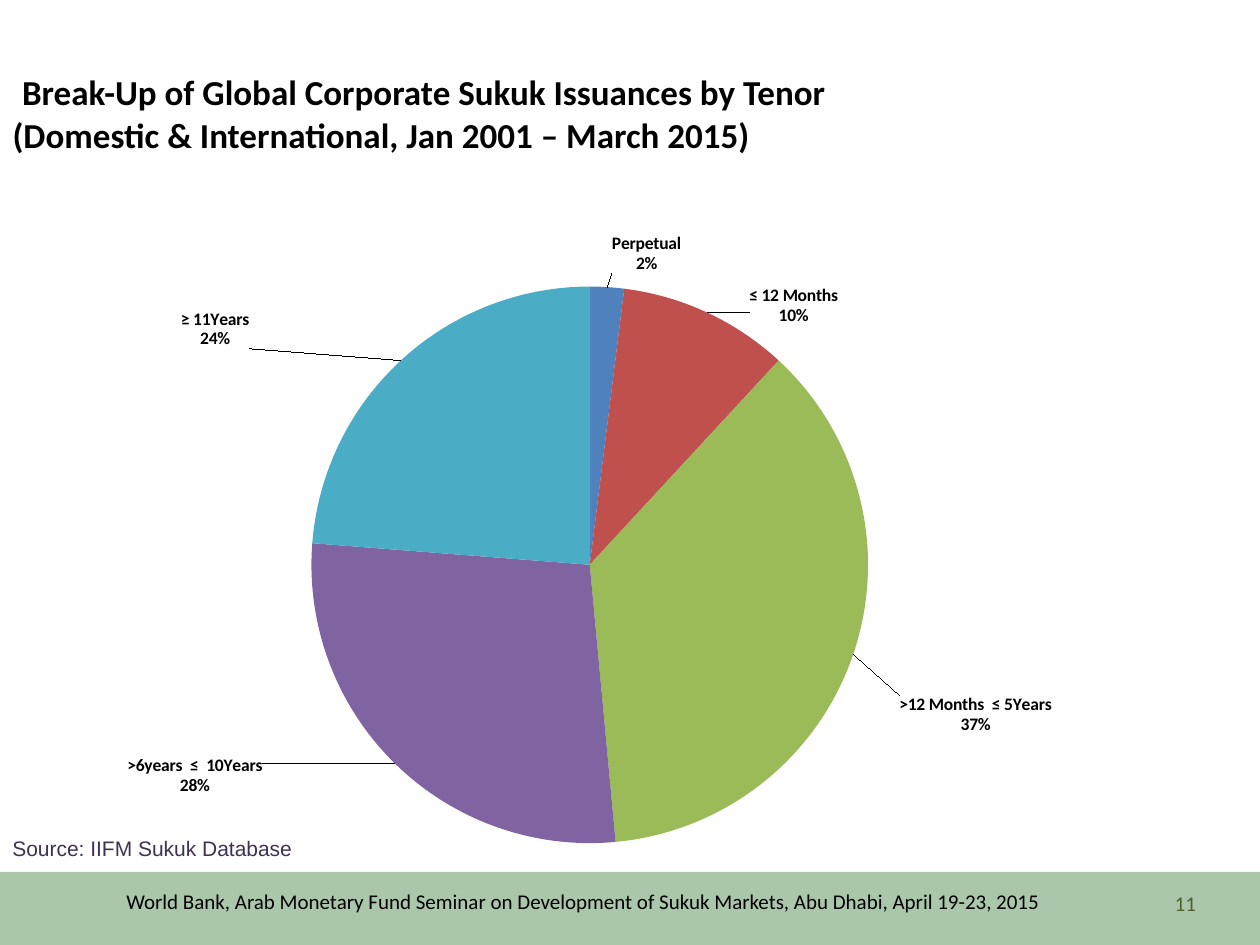
import lxml.etree
import pptx
import pptx.chart.data
import pptx.dml.color
import pptx.enum.chart
import pptx.enum.shapes
import pptx.enum.text
import pptx.oxml
import pptx.oxml.ns
import pptx.util

Inches = pptx.util.Inches
ALIGN = pptx.enum.text.PP_ALIGN
ANCHOR = pptx.enum.text.MSO_ANCHOR

# Category, percentage, slice colour, label shift as a share of the chart size
TENORS = [
    ("Perpetual", 2, "4F81BD", (0.04, -0.01)),
    ("≤ 12 Months", 10, "C0504D", (0.04, 0.03)),
    (">12 Months  ≤ 5Years", 37, "9BBB59", (0.04, 0.06)),
    (">6years  ≤  10Years", 28, "8064A2", (-0.13, -0.02)),
    ("≥ 11Years", 24, "4BACC6", (-0.15, -0.01)),
]


def color(value):
    return pptx.dml.color.RGBColor.from_string(value)


def place(shape, left, top, width, height):
    shape.left, shape.top = Inches(left), Inches(top)
    shape.width, shape.height = Inches(width), Inches(height)


def set_font(font, size, name, hex_color, bold=False):
    font.size = pptx.util.Pt(size)
    font.name = name
    font.bold = bold
    font.color.rgb = color(hex_color)


def add_band(slide):
    band = slide.shapes.add_shape(
        pptx.enum.shapes.MSO_SHAPE.RECTANGLE,
        Inches(0), Inches(6.92), Inches(10), Inches(0.58))
    band.shadow.inherit = False
    band.line.fill.background()
    band.fill.solid()
    band.fill.fore_color.rgb = color("72A376")
    # 60 % opacity
    fill_color = band.fill._xPr.find(".//" + pptx.oxml.ns.qn("a:srgbClr"))
    lxml.etree.SubElement(fill_color, pptx.oxml.ns.qn("a:alpha"), val="60000")


def add_title(slide, text):
    title = slide.shapes.title
    place(title, 0, 0.33, 7.17, 1.08)
    frame = title.text_frame
    frame.word_wrap = True
    frame.auto_size = pptx.enum.text.MSO_AUTO_SIZE.NONE
    frame.vertical_anchor = ANCHOR.MIDDLE
    frame.margin_right = Inches(0.05)
    paragraph = frame.paragraphs[0]
    paragraph.alignment = ALIGN.LEFT
    for content, size in ((" ", 24), (text, 20)):
        run = paragraph.add_run()
        run.text = content
        set_font(run.font, size, "Calibri", "000000", bold=True)


def add_text(slide, text, box, font_name, hex_color,
             alignment=ALIGN.LEFT, anchor=ANCHOR.TOP):
    shape = slide.shapes.add_textbox(*map(Inches, box))
    frame = shape.text_frame
    frame.word_wrap = True
    frame.vertical_anchor = anchor
    paragraph = frame.paragraphs[0]
    paragraph.text = text
    paragraph.alignment = alignment
    set_font(paragraph.font, 12, font_name, hex_color)


def manual_layout(x, y, extra=""):
    return (f'<c:layout {pptx.oxml.ns.nsdecls("c")}><c:manualLayout>{extra}'
            f'<c:x val="{x}"/><c:y val="{y}"/>')


def add_label_shift(labels_element, index, shift):
    """Move one label away from its slice, so that a leader line shows."""
    label = pptx.oxml.parse_xml(
        f'<c:dLbl {pptx.oxml.ns.nsdecls("c")}><c:idx val="{index}"/>'
        + manual_layout(*shift) + '</c:manualLayout></c:layout>'
        '<c:dLblPos val="outEnd"/>'
        '<c:showLegendKey val="0"/><c:showVal val="0"/><c:showCatName val="1"/>'
        '<c:showSerName val="0"/><c:showPercent val="1"/>'
        '<c:showBubbleSize val="0"/><c:separator>\n</c:separator></c:dLbl>')
    labels_element.insert(index, label)


def add_pie(slide):
    data = pptx.chart.data.CategoryChartData(number_format="#,##0")
    data.categories = [tenor[0] for tenor in TENORS]
    data.add_series("Series 1", [tenor[1] for tenor in TENORS])
    chart = slide.shapes.add_chart(
        pptx.enum.chart.XL_CHART_TYPE.PIE,
        Inches(1), Inches(1.75), Inches(7.75), Inches(5.11), data).chart
    chart.has_title = False
    chart.has_legend = False
    set_font(chart.font, 10, "Calibri", "000000", bold=True)
    plot = chart.plots[0]
    plot.vary_by_categories = True
    series = plot.series[0]

    # Labels: category over percentage
    labels = series.data_labels
    labels.show_value = False
    labels.show_category_name = True
    labels.show_percentage = True
    labels.number_format = "0%"
    labels.number_format_is_linked = False
    labels.position = pptx.enum.chart.XL_LABEL_POSITION.OUTSIDE_END
    labels_element = series._element.find(pptx.oxml.ns.qn("c:dLbls"))
    separator = lxml.etree.Element(pptx.oxml.ns.qn("c:separator"))
    separator.text = "\n"
    labels_element.find(pptx.oxml.ns.qn("c:showBubbleSize")).addnext(separator)

    for index, (_, _, hex_color, shift) in enumerate(TENORS):
        fill = series.points[index].format.fill
        fill.solid()
        fill.fore_color.rgb = color(hex_color)
        add_label_shift(labels_element, index, shift)

    # Fixed plot area
    plot_area = chart._chartSpace.find(".//" + pptx.oxml.ns.qn("c:plotArea"))
    for layout in plot_area.findall(pptx.oxml.ns.qn("c:layout")):
        plot_area.remove(layout)
    modes = ('<c:layoutTarget val="inner"/>'
             '<c:xMode val="edge"/><c:yMode val="edge"/>')
    plot_area.insert(0, pptx.oxml.parse_xml(
        manual_layout(0.19, 0.1, modes)
        + '<c:w val="0.57"/><c:h val="0.87"/></c:manualLayout></c:layout>'))


def main():
    presentation = pptx.Presentation()
    presentation.slide_width = Inches(10)
    presentation.slide_height = Inches(7.5)
    slide = presentation.slides.add_slide(presentation.slide_layouts[5])

    add_band(slide)
    add_title(slide, "Break-Up of Global Corporate Sukuk Issuances by Tenor "
                     "(Domestic & International, Jan 2001 – March 2015)")
    add_pie(slide)

    # Source and footer
    add_text(slide, "Source: IIFM Sukuk Database", (0, 6.58, 3.5, 0.3),
             "Arial", "403152")
    add_text(slide, "World Bank, Arab Monetary Fund Seminar on Development of "
                    "Sukuk Markets, Abu Dhabi, April 19-23, 2015",
             (0.42, 7, 8.42, 0.33), "Calibri", "000000", ALIGN.CENTER)
    add_text(slide, "11", (8.42, 7, 1.17, 0.33), "Calibri", "4F6228",
             ALIGN.RIGHT, ANCHOR.MIDDLE)

    presentation.save("out.pptx")


if __name__ == "__main__":
    main()
